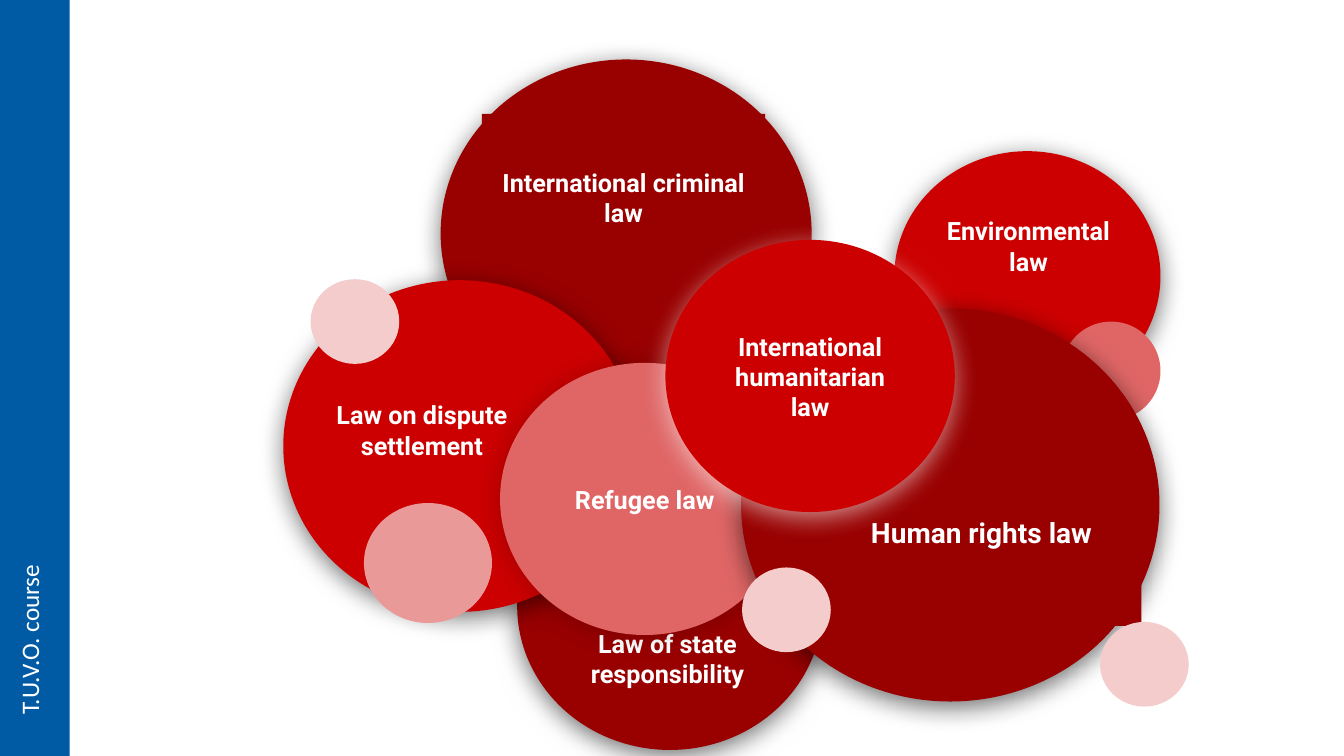
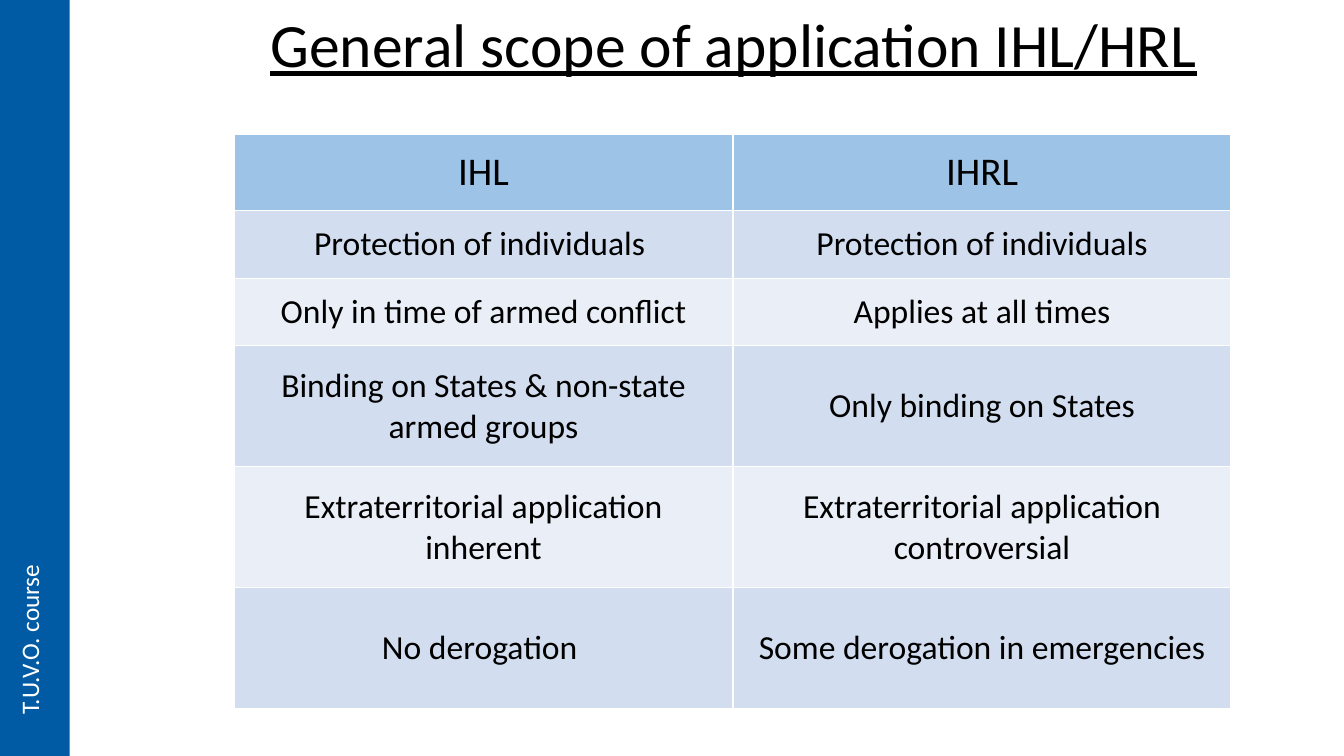
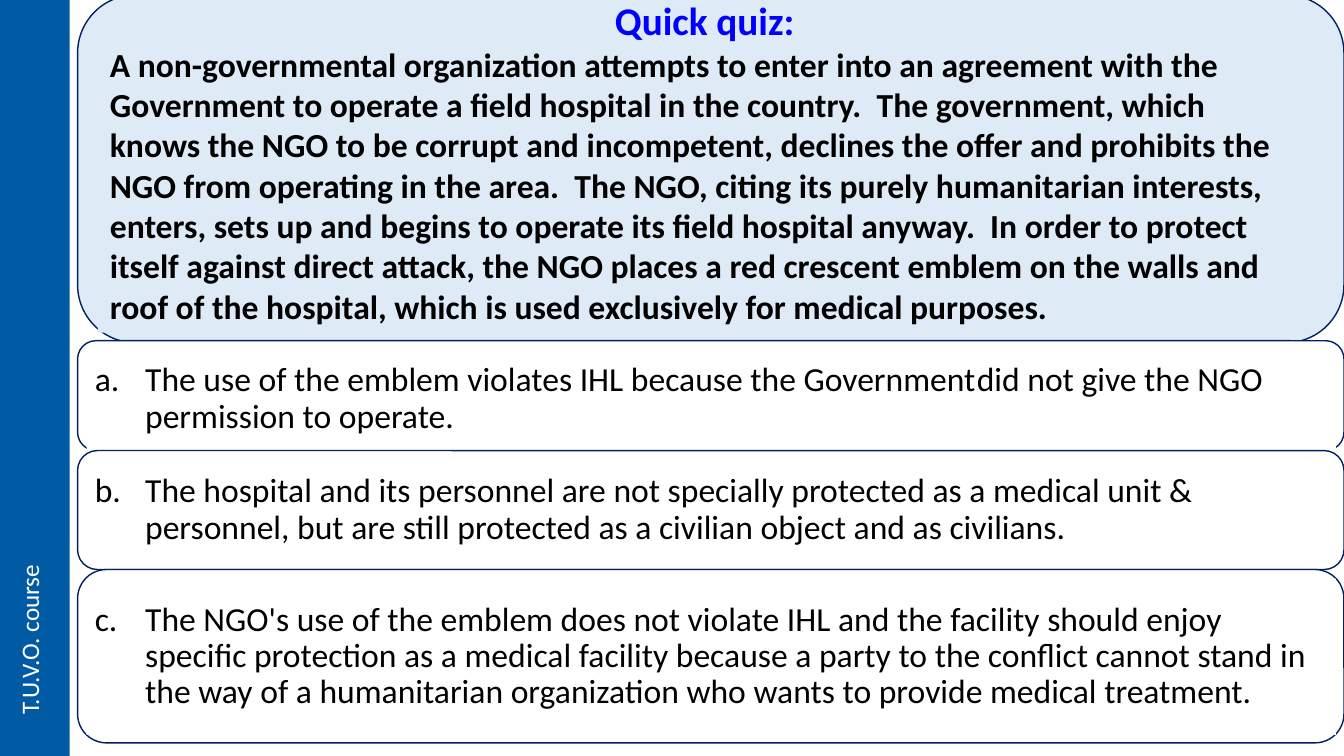
from lxml import etree
from pptx import Presentation
from pptx.dml.color import RGBColor
from pptx.enum import shapes, text
from pptx.oxml import ns
from pptx.util import Inches, Pt


class Theme:
    band = "005BA4"
    white = "FFFFFF"
    black = "000000"
    dark_red = "990000"
    red = "CC0000"
    coral = "E06666"
    rose = "EA9999"
    blush = "F4CCCC"
    header = "9DC3E6"
    rows = ("D2DEEF", "EAEFF7")
    question = "DEEBF7"
    outline = "002060"
    heading = "0000FF"
    body_font = "Calibri"
    circle_font = "Roboto"
    title_size = 44
    heading_size = 28
    body_size = 24
    human_rights_size = 20
    label_size = 18


def write(para, words, size, color, font=Theme.body_font, bold=False, align=text.PP_ALIGN.CENTER):
    para.alignment = align
    span = para.add_run()
    span.text = words
    span.font.size = Pt(size)
    span.font.name = font
    span.font.bold = bold
    span.font.color.rgb = RGBColor.from_string(color)
    return span


def add_panel(page, kind, place, fill, line=None, inset=0.1):
    panel = page.shapes.add_shape(kind, *map(Inches, place))
    panel.shadow.inherit = False
    if fill:
        panel.fill.solid()
        panel.fill.fore_color.rgb = RGBColor.from_string(fill)
    else:
        panel.fill.background()
    if line:
        panel.line.color.rgb = RGBColor.from_string(line)
        panel.line.width = Pt(1)
    else:
        panel.line.fill.background()
    frame = panel.text_frame
    frame.word_wrap = True
    frame.vertical_anchor = text.MSO_ANCHOR.MIDDLE
    frame.margin_left = frame.margin_right = Inches(inset)
    frame.margin_top = frame.margin_bottom = Inches(inset)
    return panel


RECTANGLE = shapes.MSO_SHAPE.RECTANGLE
ROUNDED = shapes.MSO_SHAPE.ROUNDED_RECTANGLE
OVAL = shapes.MSO_SHAPE.OVAL
LEFT = text.PP_ALIGN.LEFT

deck = Presentation()
deck.slide_width = Inches(13.33)
deck.slide_height = Inches(7.5)
title_only, blank = deck.slide_layouts[5], deck.slide_layouts[6]
circles_page, scope_page, quiz_page = [
    deck.slides.add_slide(layout) for layout in (blank, title_only, blank)
]

for page in deck.slides:
    add_panel(page, RECTANGLE, (0, 0, 0.69, 7.5), Theme.band)
    box = page.shapes.add_textbox(Inches(0.09), Inches(5.61), Inches(0.5), Inches(1.58))
    box.text_frame.word_wrap = False
    box.text_frame._txBody.bodyPr.set("vert", "vert270")
    write(box.text_frame.paragraphs[0], "T.U.V.O. course", Theme.label_size, Theme.white, align=LEFT)

strong = (Theme.black, 55, 4, 90)
faint = (Theme.black, 20, 0.8, 80)
glow = (Theme.white, 55, 4, 90)
dark, red, coral = Theme.dark_red, Theme.red, Theme.coral
circles = [
    (dark, (5.13, 4.59, 3.03, 2.85), strong, "Law of state responsibility", (5.61, 6.01, 2.02, 1.04), dark),
    (dark, (4.37, 0.59, 3.68, 3.45), strong, "International criminal law", (4.78, 1.13, 2.81, 1.65), dark),
    (red, (8.87, 1.5, 2.64, 2.48), strong, "Environmental law", (9.19, 1.85, 2.02, 1.18), None),
    (red, (2.81, 2.78, 3.5, 3.29), strong, "Law on dispute settlement", (2.85, 3.48, 2.67, 1.57), None),
    (coral, (10.53, 3.19, 0.98, 0.98), None, None, None, None),
    (Theme.blush, (3.08, 2.77, 0.88, 0.84), None, None, None, None),
    (coral, (4.96, 3.6, 2.87, 2.7), faint, "Refugee law", None, None),
    (Theme.rose, (3.61, 4.99, 1.27, 1.19), None, None, None, None),
    (dark, (7.35, 3.06, 4.15, 3.9), strong, "Human rights law", (8.15, 4.35, 3.17, 1.86), dark),
    (red, (6.6, 2.38, 2.87, 2.7), glow, "International humanitarian law", (7.06, 2.84, 1.95, 1.79), red),
    (Theme.blush, (7.36, 5.63, 0.88, 0.84), None, None, None, None),
    (Theme.blush, (10.91, 6.17, 0.88, 0.84), None, None, None, None),
]
for fill, place, shadow, label, label_place, label_fill in circles:
    circle = add_panel(circles_page, OVAL, place, fill)
    if shadow:
        color, opacity, distance, angle = shadow
        effects = circle.element.spPr.find(ns.qn("a:effectLst"))
        outer = etree.SubElement(
            effects, ns.qn("a:outerShdw"), blurRad=str(Pt(18)), dist=str(Pt(distance)),
            dir=str(angle * 60000), algn="ctr", rotWithShape="0",
        )
        tint = etree.SubElement(outer, ns.qn("a:srgbClr"), val=color)
        etree.SubElement(tint, ns.qn("a:alpha"), val=str(opacity * 1000))
    if label:
        holder = circle
        if label_place:
            holder = add_panel(circles_page, RECTANGLE, label_place, label_fill)
        size = Theme.human_rights_size if label == "Human rights law" else Theme.label_size
        write(holder.text_frame.paragraphs[0], label, size, Theme.white, Theme.circle_font, True)

title = scope_page.shapes.title
title.left, title.top, title.width, title.height = map(Inches, (2.19, 0.09, 10.18, 0.76))
title.text_frame.auto_size = text.MSO_AUTO_SIZE.NONE
title.text_frame.vertical_anchor = text.MSO_ANCHOR.MIDDLE
title_para = title.text_frame.paragraphs[0]
title_para.line_spacing = 0.9
write(title_para, "General scope of application IHL/HRL", Theme.title_size, Theme.black).font.underline = True

scope_rows = [
    (0.76, "IHL", "IHRL"),
    (0.67, "Protection of individuals ", "Protection of individuals"),
    (0.67, "Only in time of armed conflict", "Applies at all times"),
    (1.2, "Binding on States & non-state armed groups", "Only binding on States"),
    (1.2, "Extraterritorial application inherent", "Extraterritorial application controversial"),
    (1.2, "No derogation ", "Some derogation in emergencies"),
]
table = scope_page.shapes.add_table(
    len(scope_rows), 2, Inches(2.32), Inches(1.33), Inches(9.89), Inches(5.7)
).table
table.horz_banding = False
table.columns[0].width = Inches(4.95)
table.columns[1].width = Inches(4.94)
for row, (height, *entries) in enumerate(scope_rows):
    table.rows[row].height = Inches(height)
    for column, entry in enumerate(entries):
        cell = table.cell(row, column)
        cell.vertical_anchor = text.MSO_ANCHOR.MIDDLE
        cell.fill.solid()
        cell.fill.fore_color.rgb = RGBColor.from_string(Theme.rows[(row - 1) % 2] if row else Theme.header)
        size = Theme.body_size if row else Theme.heading_size
        write(cell.text_frame.paragraphs[0], entry, size, Theme.black)
        properties = cell._tc.get_or_add_tcPr()
        for index, side in enumerate(("lnL", "lnR", "lnT", "lnB")):
            border = etree.Element(ns.qn("a:" + side), w=str(Pt(1)))
            solid = etree.SubElement(border, ns.qn("a:solidFill"))
            etree.SubElement(solid, ns.qn("a:srgbClr"), val=Theme.white)
            properties.insert(index, border)

add_panel(quiz_page, ROUNDED, (0.77, -0.05, 12.56, 3.45), Theme.question, Theme.outline)
question = add_panel(quiz_page, RECTANGLE, (0.97, 0.14, 12.04, 3.16), Theme.question, inset=0.12).text_frame
question.margin_bottom = Inches(0.36)
write(question.paragraphs[0], "Quick quiz:", Theme.heading_size, Theme.heading, bold=True)
write(
    question.add_paragraph(),
    "A non-governmental organization attempts to enter into an agreement with the Government to operate "
    "a field hospital in the country.  The government, which knows the NGO to be corrupt and incompetent, "
    "declines the offer and prohibits the NGO from operating in the area.  The NGO, citing its purely "
    "humanitarian interests, enters, sets up and begins to operate its field hospital anyway.  In order to "
    "protect itself against direct attack, the NGO places a red crescent emblem on the walls and roof of the "
    "hospital, which is used exclusively for medical purposes.",
    Theme.body_size, Theme.black, bold=True, align=LEFT,
)

answers = [
    (3.38, 1.09, 3.68, 0.98, 0.5,
     "The use of the emblem violates IHL because the Government\tdid not give the NGO permission to operate."),
    (4.47, 1.18, 4.53, 1.06, 0.08,
     "The hospital and its personnel are not specially protected as a medical unit & personnel, "
     "but are still protected as a civilian object and as civilians."),
    (5.65, 1.72, 5.74, 1.55, 0.08,
     "The NGO's use of the emblem does not violate IHL and the facility should enjoy specific protection "
     "as a medical facility because a party to the conflict cannot stand in the way of a humanitarian "
     "organization who wants to provide medical treatment."),
]
for number, (top, height, text_top, text_height, bottom_inset, answer) in enumerate(answers, 1):
    add_panel(quiz_page, ROUNDED, (0.77, top, 12.56, height), Theme.white, Theme.outline)
    panel = add_panel(quiz_page, RECTANGLE, (0.86, text_top, 12.39, text_height), Theme.white, inset=0.08)
    panel.text_frame.margin_bottom = Inches(bottom_inset)
    para = panel.text_frame.paragraphs[0]
    para.line_spacing = 0.9
    write(para, answer, Theme.body_size, Theme.black, align=LEFT)
    properties = para._p.get_or_add_pPr()
    properties.set("marL", str(Inches(0.5)))
    properties.set("indent", str(Inches(-0.5)))
    properties.set("defTabSz", str(Pt(70)))
    etree.SubElement(properties, ns.qn("a:buAutoNum"), type="alphaLcPeriod", startAt=str(number))

deck.save("out.pptx")
